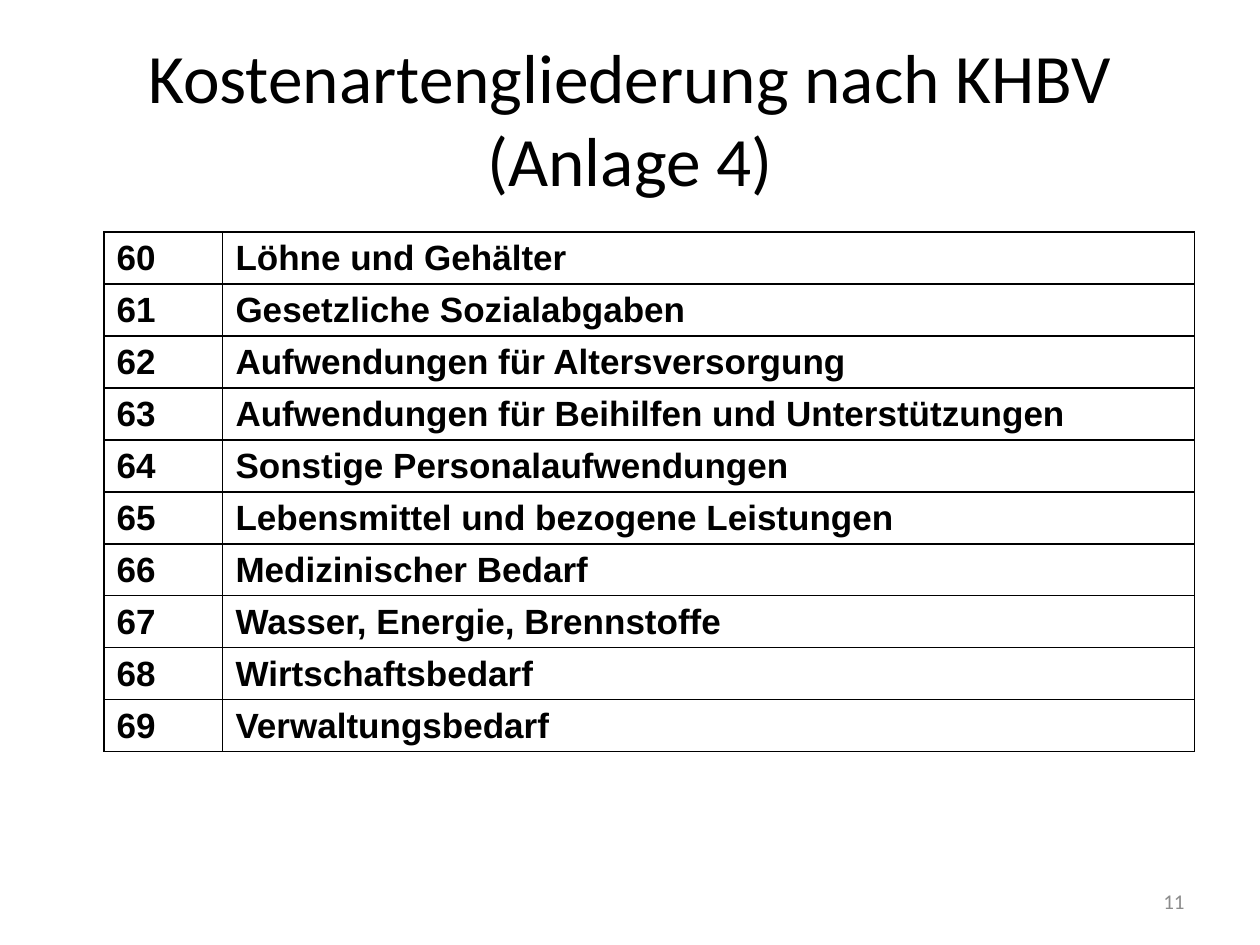
"""Builds the slide listing hospital cost types under KHBV, Anlage 4."""
import pptx
import pptx.dml.color
import pptx.enum.text
import pptx.oxml.ns
import pptx.util
from lxml import etree

EMU_PER_PX = 914400 // 126
BLACK = pptx.dml.color.RGBColor(0x00, 0x00, 0x00)
GREY = pptx.dml.color.RGBColor(0x8C, 0x8C, 0x8C)
ALIGN = pptx.enum.text.PP_ALIGN
MIDDLE = pptx.enum.text.MSO_ANCHOR.MIDDLE

FIRST_NUMBER = 60
COST_TYPES = [
    "Löhne und Gehälter",
    "Gesetzliche Sozialabgaben",
    "Aufwendungen für Altersversorgung",
    "Aufwendungen für Beihilfen und Unterstützungen",
    "Sonstige Personalaufwendungen",
    "Lebensmittel und bezogene Leistungen",
    "Medizinischer Bedarf",
    "Wasser, Energie, Brennstoffe",
    "Wirtschaftsbedarf",
    "Verwaltungsbedarf",
]
COLUMN_WIDTHS = (119, 972)
ROW_HEIGHT = 52


def px(n):
    return pptx.util.Emu(n * EMU_PER_PX)


def set_text(tf, text, size, font, color, align, bold=False):
    tf.text = text
    tf.word_wrap = True
    p = tf.paragraphs[0]
    p.alignment = align
    r = p.runs[0]
    r.font.size = pptx.util.Pt(size)
    r.font.name = font
    r.font.bold = bold
    r.font.color.rgb = color


def set_borders(cell, color, width):
    tc_pr = cell._tc.get_or_add_tcPr()
    qn = pptx.oxml.ns.qn
    for i, side in enumerate(("lnL", "lnR", "lnT", "lnB")):
        ln = etree.Element(qn(f"a:{side}"), w=str(pptx.util.Pt(width)))
        fill = etree.SubElement(ln, qn("a:solidFill"))
        etree.SubElement(fill, qn("a:srgbClr"), val=str(color))
        tc_pr.insert(i, ln)


def add_title(s, text):
    sp = s.shapes.title
    sp.left, sp.top, sp.width, sp.height = px(63), px(38), px(1134), px(158)
    set_text(sp.text_frame, text, 39.6, "Calibri", BLACK, ALIGN.CENTER)
    sp.text_frame.vertical_anchor = MIDDLE


def add_cost_table(s, left, top):
    rows = [(str(n), name) for n, name in enumerate(COST_TYPES, FIRST_NUMBER)]
    frame = s.shapes.add_table(len(rows), len(COLUMN_WIDTHS), px(left), px(top),
                               px(sum(COLUMN_WIDTHS)), px(ROW_HEIGHT * len(rows)))
    table = frame.table
    table.first_row = table.horz_banding = False
    for column, width in zip(table.columns, COLUMN_WIDTHS):
        column.width = px(width)
    for row, texts in zip(table.rows, rows):
        row.height = px(ROW_HEIGHT)
        for cell, text in zip(row.cells, texts):
            cell.fill.background()
            set_borders(cell, BLACK, 0.75)
            cell.margin_top = cell.margin_bottom = px(5)
            cell.vertical_anchor = MIDDLE
            set_text(cell.text_frame, text, 20, "Arial", BLACK, ALIGN.LEFT, bold=True)


def add_page_number(s, text):
    sp = s.shapes.add_textbox(px(903), px(876), px(294), px(50))
    set_text(sp.text_frame, text, 12, "Calibri", GREY, ALIGN.RIGHT)
    sp.text_frame.vertical_anchor = MIDDLE


def main():
    prs = pptx.Presentation()
    prs.slide_width, prs.slide_height = px(1260), px(945)
    s = prs.slides.add_slide(prs.slide_layouts[5])
    add_title(s, "Kostenartengliederung nach KHBV (Anlage 4)")
    add_cost_table(s, 104, 232)
    add_page_number(s, "11")
    prs.save("out.pptx")


if __name__ == "__main__":
    main()
